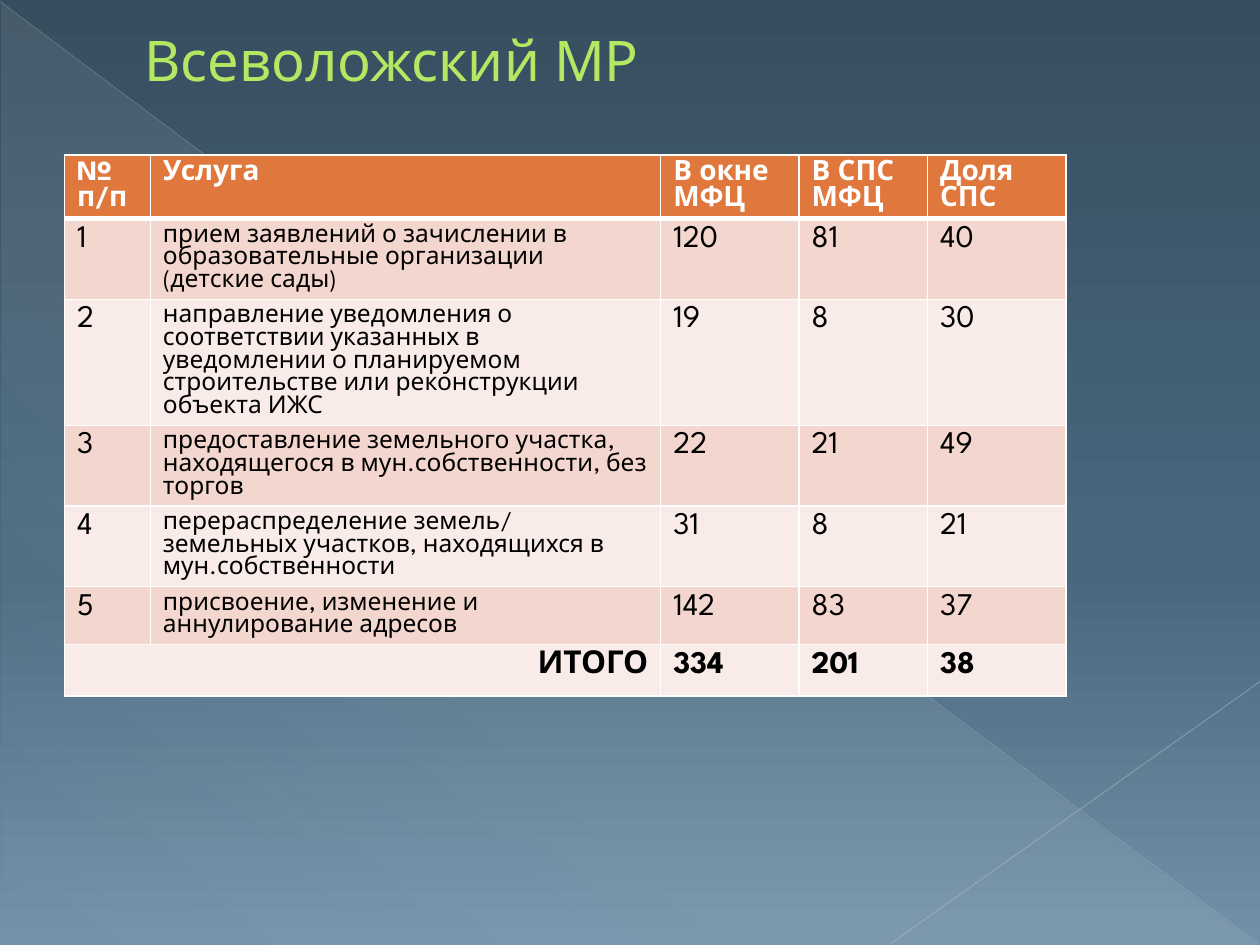
from lxml import etree
from pptx import Presentation
from pptx import util as u
from pptx.dml.color import RGBColor
from pptx.enum import shapes, text
from pptx.oxml.ns import qn

HEADER = ["№ п/п", "Услуга", "В окне МФЦ", "В СПС МФЦ", "Доля СПС"]
SERVICES = [
    ("прием заявлений о зачислении в образовательные организации (детские сады)",
     120, 81, 40),
    ("направление уведомления о соответствии указанных в уведомлении о планируемом "
     "строительстве или реконструкции объекта ИЖС", 19, 8, 30),
    ("предоставление земельного участка, находящегося в мун.собственности, без торгов",
     22, 21, 49),
    ("перераспределение земель/ земельных участков, находящихся в мун.собственности",
     31, 8, 21),
    ("присвоение, изменение и аннулирование адресов", 142, 83, 37),
]
TOTALS = ["ИТОГО", "", 334, 201, 38]
COLUMNS = [1.73, 10.29, 2.79, 2.59, 2.79]
ROW_HEIGHT = 1.03


def rgb(value):
    return RGBColor.from_string(value)


def add_color(parent, color, opacity=100):
    clr = etree.SubElement(parent, qn("a:srgbClr"), val=color)
    if opacity < 100:
        etree.SubElement(clr, qn("a:alpha"), val=str(opacity * 1000))


def set_gradient(fill, holder, stops, angle):
    """Fill with stops given as (position %, colour, opacity %)."""
    fill.gradient()
    grad = holder.find(".//" + qn("a:gradFill"))
    for child in list(grad):
        grad.remove(child)
    stop_list = etree.SubElement(grad, qn("a:gsLst"))
    for pos, color, opacity in stops:
        gs = etree.SubElement(stop_list, qn("a:gs"), pos=str(pos * 1000))
        add_color(gs, color, opacity)
    etree.SubElement(grad, qn("a:lin"), ang=str(angle * 60000), scaled="0")


class Deck:
    font = "League Spartan"
    title_color = "B4E862"
    header_fill = "E0773C"
    band_fills = ["F9ECE8", "F3D6CE"]
    border = "FFFFFF"

    def __init__(self, width, height):
        self.prs = Presentation()
        self.prs.slide_width, self.prs.slide_height = u.Cm(width), u.Cm(height)
        self.s = self.prs.slides.add_slide(self.prs.slide_layouts[5])

    def background(self, stops, angle):
        bg = self.s.background
        set_gradient(bg.fill, self.s.element, stops, angle)

    def triangle(self, box, stops, angle):
        sp = self.s.shapes.add_shape(
            shapes.MSO_SHAPE.RIGHT_TRIANGLE, *map(u.Cm, box))
        sp.shadow.inherit = False
        sp.line.fill.background()
        set_gradient(sp.fill, sp.element.spPr, stops, angle)

    def line(self, ends, color, width, opacity):
        ln = self.s.shapes.add_connector(
            shapes.MSO_CONNECTOR.STRAIGHT, *map(u.Cm, ends))
        ln.line.width = u.Pt(width)
        ln.line.fill.solid()
        solid = ln.line.fill._xPr.find(qn("a:solidFill"))
        for child in list(solid):
            solid.remove(child)
        add_color(solid, color, opacity)
        etree.SubElement(ln.element.spPr, qn("a:effectLst"))

    def run(self, p, words, size, color, bold=False):
        r = p.add_run()
        r.text = str(words)
        r.font.name, r.font.size, r.font.bold = self.font, u.Pt(size), bold
        r.font.color.rgb = rgb(color)

    def title(self, words, box, indent):
        sp = self.s.shapes.title
        sp.left, sp.top, sp.width, sp.height = map(u.Cm, box)
        tf = sp.text_frame
        tf.auto_size = text.MSO_AUTO_SIZE.NONE
        tf.vertical_anchor = text.MSO_ANCHOR.MIDDLE
        p = tf.paragraphs[0]
        p.alignment = text.PP_ALIGN.LEFT
        p._p.get_or_add_pPr().set("marL", str(u.Cm(indent)))
        self.run(p, words, 32, self.title_color)

    def cell_borders(self, cell, widths):
        """Border widths in points, in the order left, right, top, bottom."""
        tc_pr = cell._tc.get_or_add_tcPr()
        for i, (side, width) in enumerate(zip("LRTB", widths)):
            ln = etree.Element(qn("a:ln" + side), w=str(u.Pt(width)))
            add_color(etree.SubElement(ln, qn("a:solidFill")), self.border)
            tc_pr.insert(i, ln)

    def table(self, rows, left, top, columns, row_height):
        last = len(rows) - 1
        table = self.s.shapes.add_table(
            len(rows), len(columns), u.Cm(left), u.Cm(top),
            u.Cm(sum(columns)), u.Cm(row_height * len(rows))).table
        for column, width in zip(table.columns, columns):
            column.width = u.Cm(width)
        for i, row in enumerate(rows):
            table.rows[i].height = u.Cm(row_height)
            for j, words in enumerate(row):
                cell = table.cell(i, j)
                cell.fill.solid()
                cell.fill.fore_color.rgb = rgb(
                    self.band_fills[i % 2] if i else self.header_fill)
                self.cell_borders(
                    cell, (1, 1, 3 if i == 1 else 1, 3 if i == 0 else 1))
                if words == "":
                    continue
                size = 16 if i == 0 else 14 if j == 1 else 18
                self.run(cell.text_frame.paragraphs[0], words, size,
                         "000000" if i else "FFFFFF", bold=i in (0, last))
        # The total label spans the first two columns
        total = table.cell(last, 0)
        total.merge(table.cell(last, 1))
        total.text_frame.paragraphs[0].alignment = text.PP_ALIGN.RIGHT


def main():
    deck = Deck(25.4, 19.05)

    # Backdrop
    deck.background([(0, "374E5F", 100), (60, "49687E", 100),
                     (100, "7291A8", 100)], 90)
    deck.triangle((0.03, 0.05, 25.35, 19), [
        (0, "E7ECED", 10), (70, "E7ECED", 8), (100, "E7ECED", 1)], 133)
    deck.line((0, 0.03, 25.37, 19.02), "BAC0C6", 0.39, 35)
    deck.line((25.4, 13.74, 17.96, 19.02), "C2C7CC", 0.47, 45)

    # Title
    deck.title("Всеволожский МР", (1.3, 0, 22.86, 2.39), 1.35)

    # Table of services
    numbered = [(n, *service) for n, service in enumerate(SERVICES, 1)]
    deck.table([HEADER, *numbered, TOTALS], 1.3, 3.12, COLUMNS, ROW_HEIGHT)

    deck.prs.save("out.pptx")


if __name__ == "__main__":
    main()
